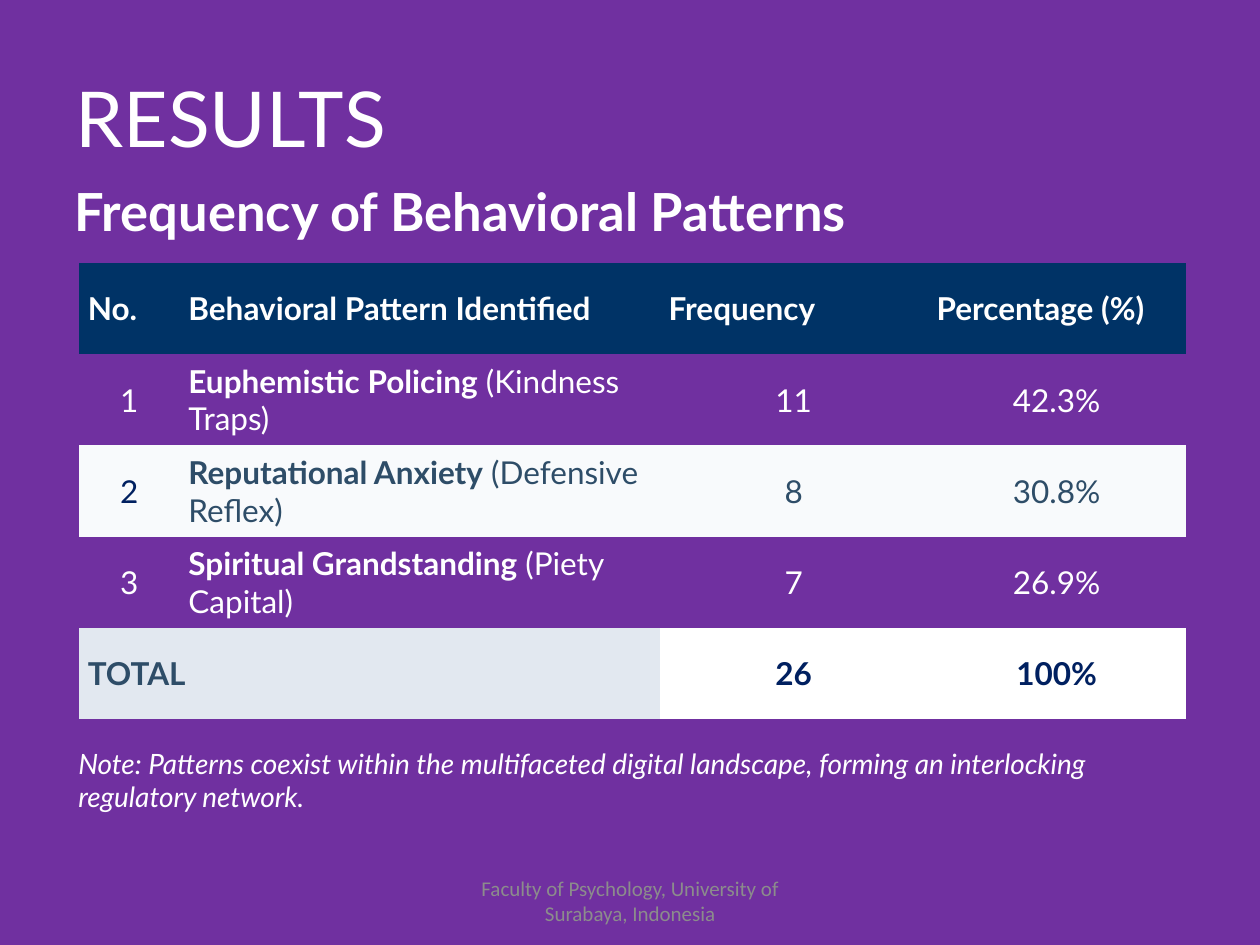
from pptx import Presentation
from pptx.dml.color import RGBColor
from pptx.enum.text import MSO_ANCHOR, PP_ALIGN
from pptx.oxml.ns import qn
from pptx.util import Cm, Pt

WHITE, NAVY, SLATE, HEADER = "FFFFFF", "002060", "2E4D68", "003366"
PALE, TOTAL_FILL, PURPLE, GREY = "F8FAFC", "E2E8F0", "7030A0", "8C8C8C"
NO_STYLE_NO_GRID = "{2D5ABB26-0587-4C30-8999-92F81FD0307C}"


def color(hex_value):
    return RGBColor.from_string(hex_value)


class SlideBuilder:
    FONT = "Lato"

    def __init__(self, slide, background):
        self.slide = slide
        fill = slide.background.fill
        fill.solid()
        fill.fore_color.rgb = color(background)

    def set_text(self, paragraph, text, size, ink, font=FONT, bold=False,
                 italic=False, align=PP_ALIGN.LEFT):
        """Fill a paragraph; a (strong, plain) pair gives a bold lead."""
        paragraph.alignment = align
        style = paragraph.font
        style.name, style.size = font, Pt(size)
        style.color.rgb = color(ink)
        if isinstance(text, tuple):
            for part, strong in zip(text, (True, False)):
                run = paragraph.add_run()
                run.text, run.font.bold = part, strong
        else:
            style.bold, style.italic = bold, italic
            paragraph.add_run().text = text

    def title(self, text, left, top, width, height):
        title = self.slide.shapes.title
        title.left, title.top = Cm(left), Cm(top)
        title.width, title.height = Cm(width), Cm(height)
        title.text_frame.vertical_anchor = MSO_ANCHOR.MIDDLE
        self.set_text(title.text_frame.paragraphs[0], text, 44, WHITE)

    def text(self, text, left, top, width, height, size, ink=WHITE,
             margins=(0, 0), anchor=MSO_ANCHOR.TOP, **style):
        box = self.slide.shapes.add_textbox(Cm(left), Cm(top), Cm(width), Cm(height))
        frame = box.text_frame
        frame.word_wrap = True
        frame.vertical_anchor = anchor
        frame.margin_left = frame.margin_right = Cm(margins[0])
        frame.margin_top = frame.margin_bottom = Cm(margins[1])
        self.set_text(frame.paragraphs[0], text, size, ink, **style)

    def table(self, row_count, left, top, column_widths, row_height):
        frame = self.slide.shapes.add_table(
            row_count, len(column_widths), Cm(left), Cm(top),
            Cm(sum(column_widths)), Cm(row_height * row_count))
        table = frame.table
        table.horz_banding = False
        table._tbl.tblPr.find(qn("a:tableStyleId")).text = NO_STYLE_NO_GRID
        for column, width in zip(table.columns, column_widths):
            column.width = Cm(width)
        for row in table.rows:
            row.height = Cm(row_height)
        return table

    def cell(self, cell, text, ink, fill=None, **style):
        if fill:
            cell.fill.solid()
            cell.fill.fore_color.rgb = color(fill)
        else:
            cell.fill.background()
        cell.vertical_anchor = MSO_ANCHOR.MIDDLE
        cell.margin_left = cell.margin_right = Cm(0.18)
        cell.margin_top = cell.margin_bottom = Cm(0.08)
        self.set_text(cell.text_frame.paragraphs[0], text, 18, ink, **style)


def add_frequency_table(builder):
    headings = ["No.", "Behavioral Pattern Identified", "Frequency", "Percentage (%)"]
    patterns = [
        ("1", ("Euphemistic Policing", " (Kindness Traps)"), "11", "42.3%"),
        ("2", ("Reputational Anxiety", " (Defensive Reflex)"), "8", "30.8%"),
        ("3", ("Spiritual Grandstanding", " (Piety Capital)"), "7", "26.9%"),
    ]
    totals = ["26", "100%"]
    last = len(patterns) + 1
    table = builder.table(last + 1, 1.59, 5.3, [2.03, 9.68, 5.4, 5.2], 1.84)

    for col, heading in enumerate(headings):
        builder.cell(table.cell(0, col), heading, WHITE, HEADER, bold=True)

    for row, pattern in enumerate(patterns, start=1):
        shaded = row % 2 == 0
        for col, value in enumerate(pattern):
            shaded_ink = NAVY if col == 0 else SLATE
            builder.cell(table.cell(row, col), value,
                         shaded_ink if shaded else WHITE,
                         PALE if shaded else None,
                         align=PP_ALIGN.LEFT if col == 1 else PP_ALIGN.CENTER)

    total_label = table.cell(last, 0)
    total_label.merge(table.cell(last, 1))
    builder.cell(total_label, "TOTAL", SLATE, TOTAL_FILL, bold=True)
    for col, total in enumerate(totals, start=2):
        builder.cell(table.cell(last, col), total, NAVY, WHITE,
                     bold=True, align=PP_ALIGN.CENTER)


def main():
    presentation = Presentation()
    presentation.slide_width, presentation.slide_height = Cm(25.4), Cm(19.05)
    title_only = presentation.slide_layouts[5]
    builder = SlideBuilder(presentation.slides.add_slide(title_only), PURPLE)

    builder.title("RESULTS", 1.27, 0.76, 22.86, 3.18)
    builder.text("Faculty of Psychology, University of Surabaya, Indonesia",
                 8.68, 17.65, 8.05, 1.02, 12, GREY, margins=(0.25, 0.13),
                 anchor=MSO_ANCHOR.MIDDLE, font="Calibri", align=PP_ALIGN.CENTER)
    builder.text("Frequency of Behavioral Patterns", 1.5, 3.61, 22.02, 1.32, 30, bold=True)
    builder.text("Note: Patterns coexist within the multifaceted digital landscape, "
                 "forming an interlocking regulatory network.",
                 1.58, 15.04, 21.51, 1.37, 16, italic=True)
    add_frequency_table(builder)
    presentation.save("out.pptx")


if __name__ == "__main__":
    main()
